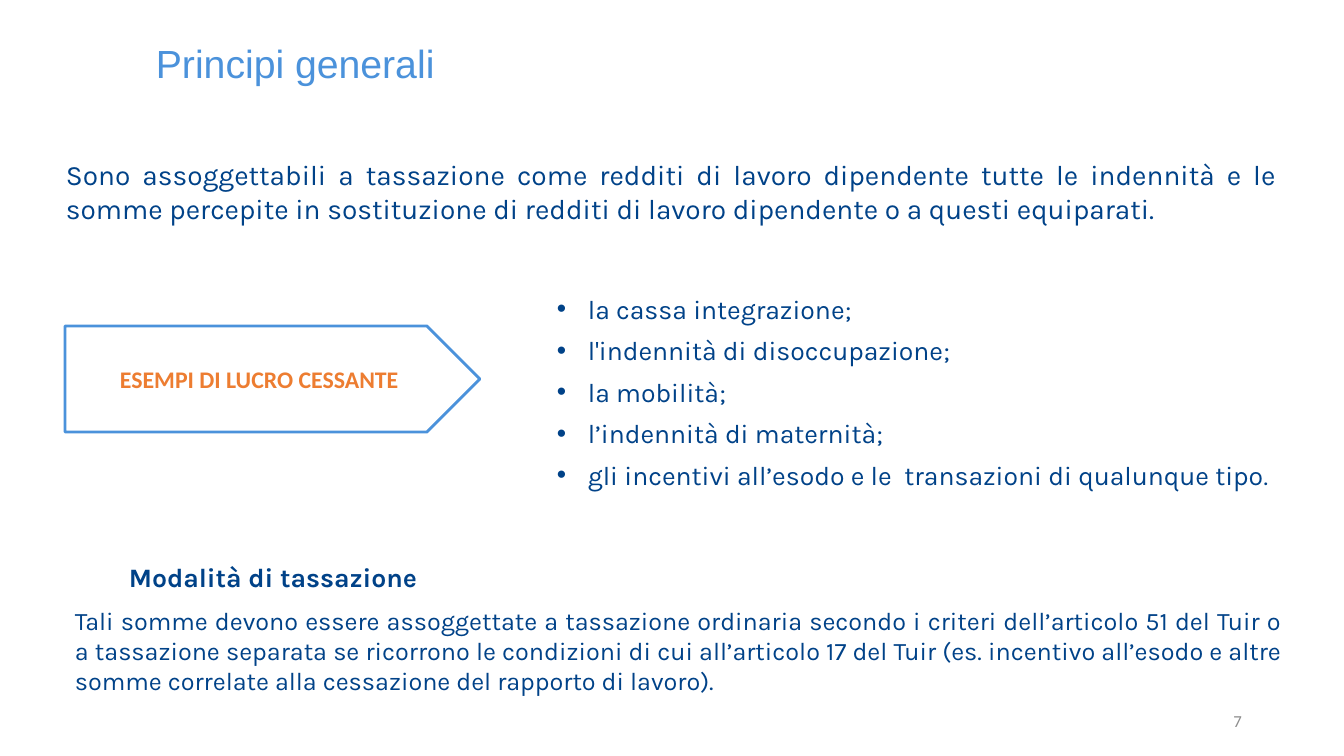
from dataclasses import dataclass

from lxml.etree import SubElement
from pptx import Presentation
from pptx.dml.color import RGBColor as Rgb
from pptx.enum.shapes import MSO_SHAPE as Preset
from pptx.enum.text import MSO_ANCHOR as Anchor, MSO_AUTO_SIZE as Fit, PP_ALIGN as Align
from pptx.oxml.ns import qn
from pptx.util import Emu, Pt

EMU_PER_PX = 914400 / 100.8


@dataclass(frozen=True)
class Theme:
    navy: str = "004288"
    sky: str = "4B92DB"
    orange: str = "ED7D31"
    grey: str = "8C8C8C"
    white: str = "FFFFFF"
    body: str = "Karla"
    heading: str = "Arial"
    label: str = "Calibri"
    title_size: int = 28
    intro_size: int = 20
    list_size: int = 19
    detail_size: int = 18
    label_size: int = 17
    number_size: int = 12
    outline: int = 2


THEME = Theme()

EXAMPLES = (
    ("la cassa integrazione;",),
    ("l'indennità di disoccupazione;",),
    ("la mobilità;",),
    ("l’indennità di maternità;",),
    ("gli incentivi all’esodo e le  transazioni di qualunque tipo", "."),
)
INTRO = (
    "Sono assoggettabili a tassazione come redditi di lavoro dipendente tutte le "
    "indennità e le somme percepite in sostituzione di redditi di lavoro dipendente "
    "o a questi equiparati."
)
TAXATION = (
    "Tali somme devono essere assoggettate a tassazione ordinaria secondo i criteri "
    "dell’articolo 51 del Tuir o a tassazione separata se ricorrono le condizioni di "
    "cui all’articolo 17 del Tuir (es. incentivo all’esodo e altre somme correlate "
    "alla cessazione del rapporto di lavoro)."
)


def px(length):
    return Emu(round(length * EMU_PER_PX))


def style(font, face, size, color, bold=False):
    font.name = face
    font.size = Pt(size)
    font.bold = bold
    font.color.rgb = Rgb.from_string(color)


def add_text(slide, box, text, face, size, color, bold=False,
             align=Align.LEFT, anchor=Anchor.TOP, wrap=True, fit=Fit.SHAPE_TO_FIT_TEXT):
    frame = slide.shapes.add_textbox(*map(px, box)).text_frame
    frame.word_wrap = wrap
    frame.auto_size = fit
    frame.vertical_anchor = anchor
    line = frame.paragraphs[0]
    line.text = text
    line.alignment = align
    style(line.font, face, size, color, bold)


def add_panel(slide, preset, box, outline=None):
    panel = slide.shapes.add_shape(preset, *map(px, box))
    panel.shadow.inherit = False
    panel.fill.solid()
    panel.fill.fore_color.rgb = Rgb.from_string(THEME.white)
    if outline:
        panel.line.color.rgb = Rgb.from_string(outline)
        panel.line.width = Pt(THEME.outline)
    else:
        panel.line.fill.background()
    panel.text_frame.word_wrap = True
    panel.text_frame.vertical_anchor = Anchor.MIDDLE
    return panel


def add_bullet(paragraph, indent):
    properties = paragraph._p.get_or_add_pPr()
    properties.set("marL", str(px(indent)))
    properties.set("indent", str(-px(indent)))
    SubElement(properties, qn("a:buFont"), typeface=THEME.heading)
    SubElement(properties, qn("a:buChar"), char="•")


def add_examples(slide, box):
    panel = add_panel(slide, Preset.SNIP_1_RECTANGLE, box)
    panel.adjustments[0] = 0.08
    frame = panel.text_frame
    for index, parts in enumerate(EXAMPLES):
        example = frame.add_paragraph() if index else frame.paragraphs[0]
        add_bullet(example, 31)
        example.alignment = Align.LEFT
        example.line_spacing = 1.3
        style(example.font, THEME.body, THEME.list_size, THEME.navy)
        for part, size in zip(parts, (THEME.list_size, THEME.detail_size)):
            run = example.add_run()
            run.text = part
            run.font.size = Pt(size)


def add_arrow_label(slide, box, text):
    arrow = add_panel(slide, Preset.PENTAGON, box, THEME.sky)
    label = arrow.text_frame.paragraphs[0]
    label.text = text
    label.alignment = Align.CENTER
    style(label.font, THEME.label, THEME.label_size, THEME.orange, bold=True)


def main():
    deck = Presentation()
    deck.slide_width, deck.slide_height = px(1344), px(756)
    slide = deck.slides.add_slide(deck.slide_layouts[6])

    add_examples(slide, (547, 235, 744, 292))
    add_arrow_label(slide, (65, 326, 415, 106), "ESEMPI DI LUCRO CESSANTE")
    add_text(slide, (950, 701, 302, 40), "7", THEME.label, THEME.number_size, THEME.grey,
             align=Align.RIGHT, anchor=Anchor.MIDDLE, fit=Fit.NONE)
    add_text(slide, (146, 34, 302, 57), "Principi generali",
             THEME.heading, THEME.title_size, THEME.sky, wrap=False)
    add_text(slide, (56, 153, 1231, 78), INTRO,
             THEME.body, THEME.intro_size, THEME.navy, align=Align.JUSTIFY)
    add_text(slide, (119, 556, 672, 42), "Modalità di tassazione",
             THEME.body, THEME.list_size, THEME.navy, bold=True)
    add_text(slide, (65, 600, 1227, 102), TAXATION,
             THEME.body, THEME.detail_size, THEME.navy, align=Align.JUSTIFY)

    deck.save("out.pptx")


if __name__ == "__main__":
    main()
